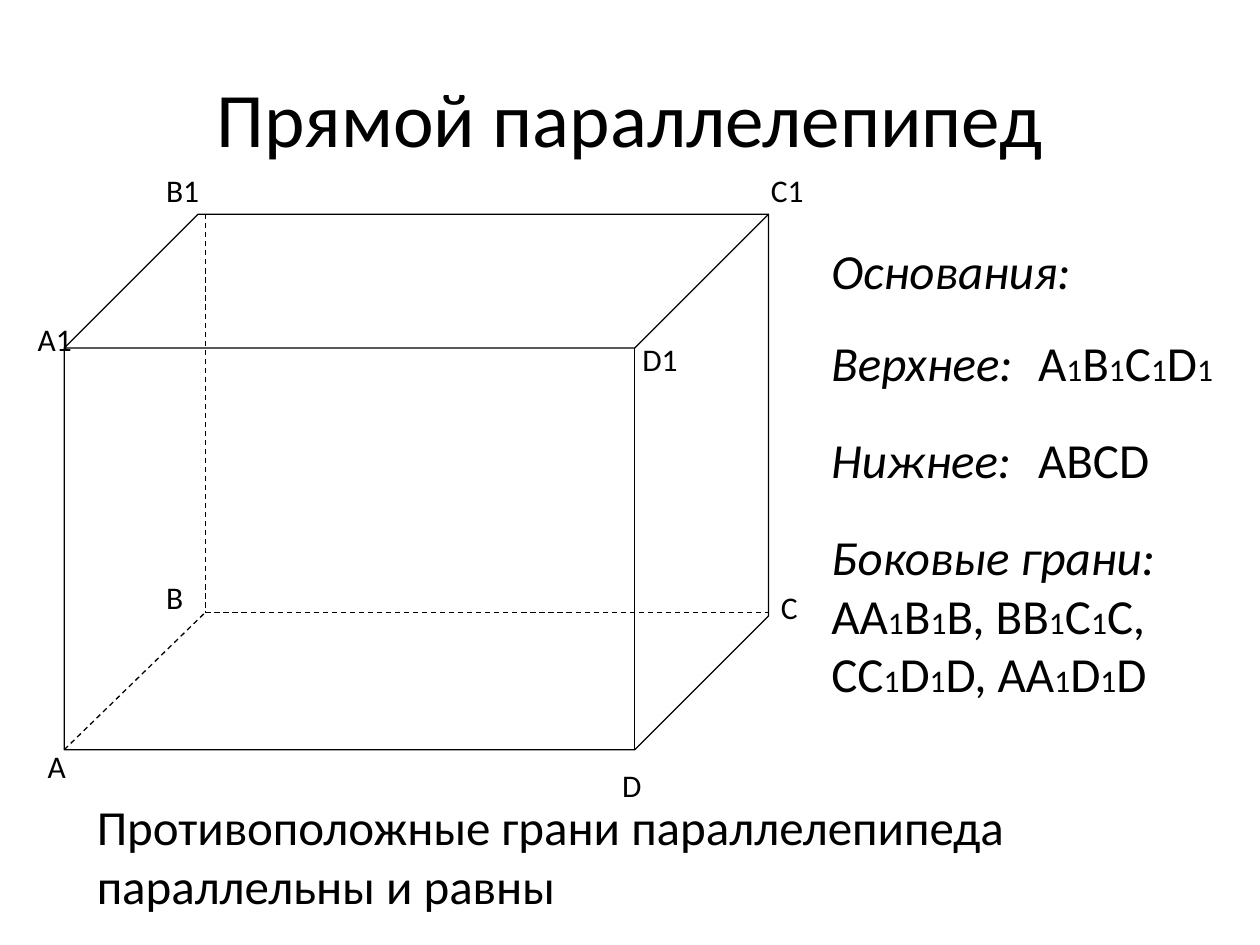
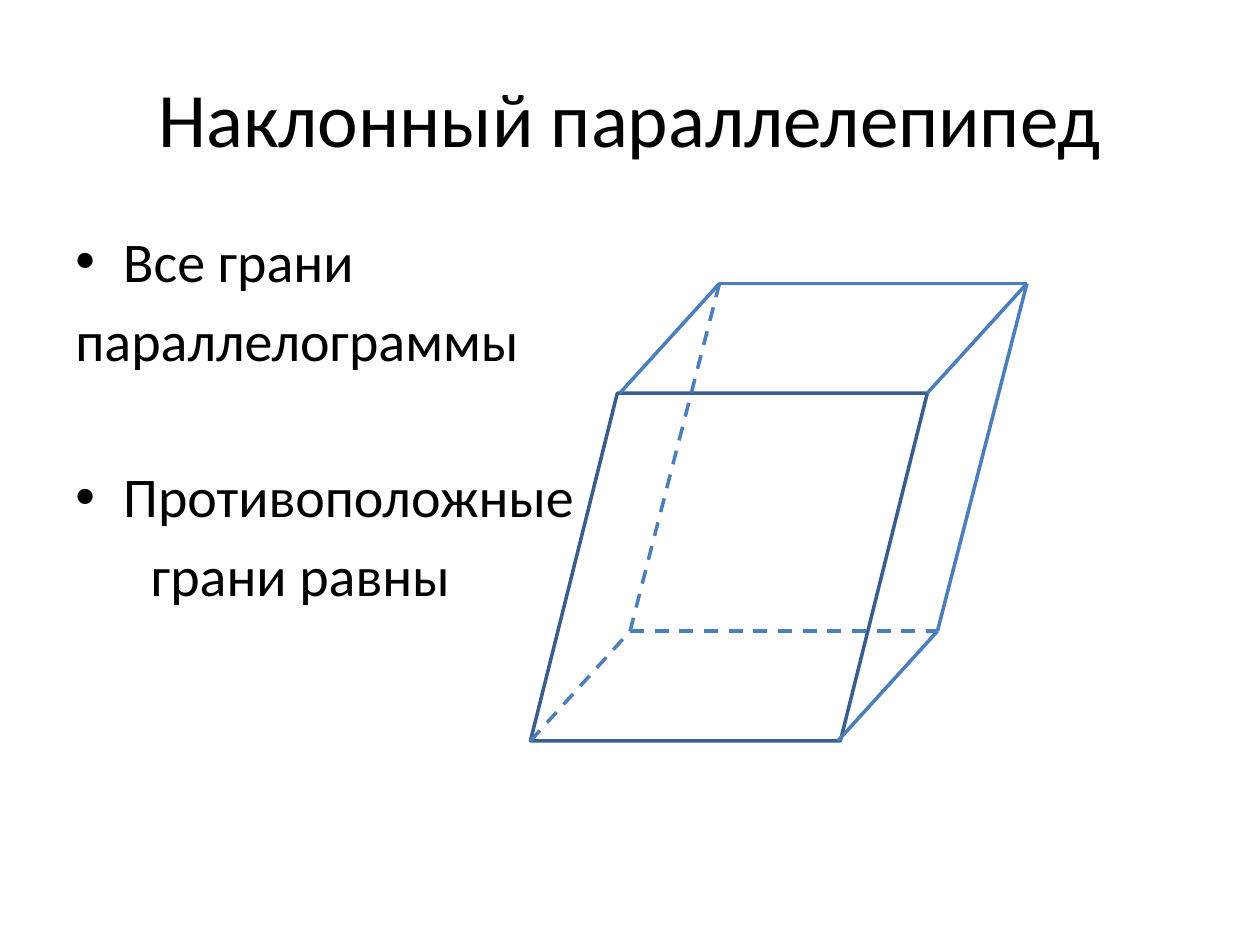
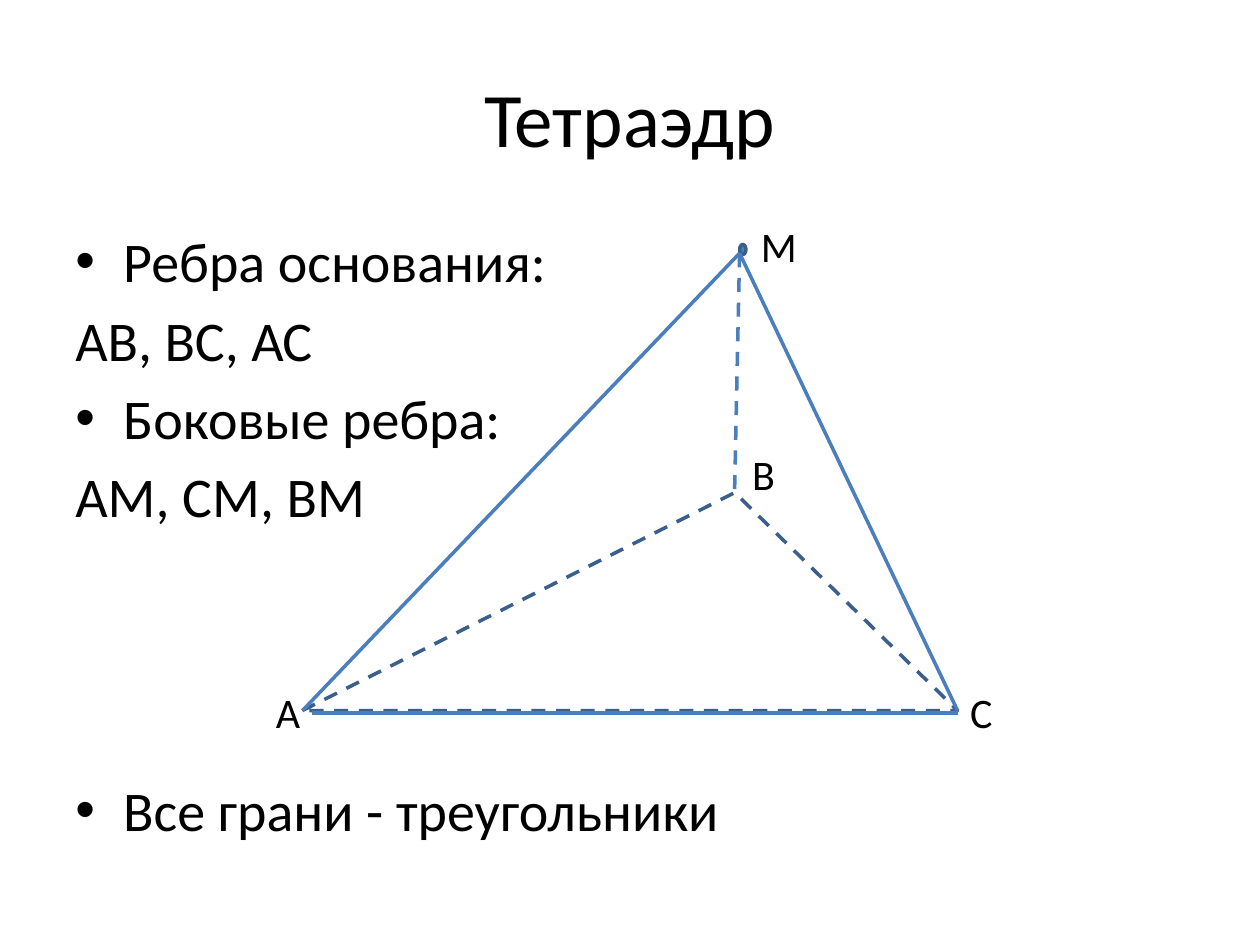
"""Build three slides on the parallelepiped and the tetrahedron."""
from dataclasses import dataclass
from itertools import groupby

from lxml import etree
from pptx import Presentation
from pptx import util as u
from pptx.dml.color import RGBColor
from pptx.enum import dml, shapes, text
from pptx.oxml import ns


@dataclass(frozen=True)
class Theme:
    font: str = "Calibri"
    ink: str = "000000"
    paper: str = "FFFFFF"
    dot: str = "4F81BD"
    edge: str = "4B7EBC"
    rim: str = "3A5F8C"
    title: int = 44
    body: int = 32
    note: int = 28
    mark: int = 24
    small: int = 18
    step: float = 44.8
    row: float = 38.4
    thin: float = 0.75
    bold: float = 2
    base: float = 2.5


T = Theme()
HEADS = ["Прямой параллелепипед", "Наклонный параллелепипед", "Тетраэдр"]

BOX = {"A": (0.51, 5.95), "B": (1.63, 4.86), "C": (6.1, 4.86), "B1": (1.63, 1.7)}
HIDDEN = [("B1", "B"), ("A", "B"), ("B", "C")]
BOX_TAGS = [
    ("А", 0.28, 5.88), ("D", 4.84, 6.03), ("C", 6.1, 4.62), ("B", 1.22, 4.54),
    ("А1", 0.2, 2.49), ("D1", 5, 2.65), ("B1", 1.22, 1.31), ("C1", 6.02, 1.31),
]
NOTES = [
    (0, "Основания:", ""),
    (19.2, "Верхнее:\t", "A1B1C1D1"),
    (21.6, "Нижнее:\t", "ABCD"),
    (21.6, "Боковые грани: ", "AA1B1B, BB1C1C, CC1D1D, AA1D1D"),
]
CLAIM = "Противоположные грани параллелепипеда параллельны и равны"

SLANT = {
    "A": (4.21, 5.88), "B": (5, 5.01), "C": (7.44, 5.01), "D": (6.65, 5.88),
    "A1": (4.92, 3.12), "B1": (5.71, 2.25), "C1": (8.15, 2.25), "D1": (7.36, 3.12),
}
SLANT_EDGES = [
    ("D1", "C1", False), ("D", "C", False), ("A", "B", True), ("B1", "C1", False),
    ("A1", "B1", False), ("B", "C", True), ("C1", "C", False), ("B1", "B", True),
]
SLANT_TEXT = [
    (1, True, 0, "Все грани"), (1, False, 0, "параллелограммы"),
    (2, True, 0, "Противоположные"), (1, False, 0.6, "грани равны"),
]

TETRA = {"A": (2.4, 5.64), "B": (5.83, 3.91), "C": (7.6, 5.64), "M": (5.87, 2.01)}
TETRA_EDGES = [("M", "A", False), ("M", "B", True), ("M", "C", False)]
TETRA_TAGS = [("В", 5.87, 3.51), ("А", 2.09, 5.4), ("С", 7.6, 5.4), ("М", 5.94, 1.7)]
TETRA_TEXT = [
    (1, True, 0, "Ребра основания:"), (1, False, 0, "АВ, ВС, АС"),
    (1, True, 0, "Боковые ребра:"), (1, False, 0, "АМ, СМ, ВМ"),
    (4, True, 0, "Все грани - треугольники"),
]


def style(font, size, slant=False):
    font.name, font.size, font.italic = T.font, u.Pt(size), slant
    font.color.rgb = RGBColor.from_string(T.ink)


def frame(slide, x, y, w, h):
    tf = slide.shapes.add_textbox(*map(u.Inches, (x, y, w, h))).text_frame
    tf.word_wrap = True
    return tf


def write(slide, words, size, *place):
    tf = frame(slide, *place)
    tf.text = words
    style(tf.paragraphs[0].runs[0].font, size)
    return tf


def lines(tf, count):
    return [tf.paragraphs[0]] + [tf.add_paragraph() for _ in range(count - 1)]


def tags(slide, items, size, wide, high):
    for name, x, y in items:
        write(slide, name, size, x, y, wide, high).margin_right = 0


def body(slide, items):
    tf = frame(slide, 0.5, 1.75, 9, 4.95)
    for i, (p, (steps, dot, left, words)) in enumerate(zip(lines(tf, len(items)), items)):
        p.text = words
        prop = p._p.get_or_add_pPr()
        if dot:
            prop.set("marL", str(u.Inches(0.38)))
            prop.set("indent", str(-u.Inches(0.38)))
            etree.SubElement(prop, ns.qn("a:buFont"), typeface="Arial")
            etree.SubElement(prop, ns.qn("a:buChar"), char="•")
        else:
            prop.set("marL", str(u.Inches(left)))
        if i:
            p.space_before = u.Pt(round(steps * T.step - T.row, 2))
        style(p.runs[0].font, T.body)


def stroke(line, color, width, dash=False):
    line.color.rgb = RGBColor.from_string(color)
    line.width = u.Pt(width)
    if dash:
        line.dash_style = dml.MSO_LINE.DASH


def join(slide, start, end, color, width, dash=False):
    link = slide.shapes.add_connector(
        shapes.MSO_CONNECTOR.STRAIGHT, *map(u.Inches, start + end))
    stroke(link.line, color, width, dash)
    etree.SubElement(link._element.spPr, ns.qn("a:effectLst"))


def solid(slide, kind, place, color, width, fill=None, dash=False):
    form = slide.shapes.add_shape(kind, *map(u.Inches, place))
    form.shadow.inherit = False
    if fill:
        form.fill.solid()
        form.fill.fore_color.rgb = RGBColor.from_string(fill)
    else:
        form.fill.background()
    stroke(form.line, color, width, dash)
    return form


def notes(slide):
    tf = frame(slide, 6.5, 1.86, 3.5, 3.8)
    for p, (gap, label, faces) in zip(lines(tf, len(NOTES)), NOTES):
        stops = etree.SubElement(p._p.get_or_add_pPr(), ns.qn("a:tabLst"))
        etree.SubElement(stops, ns.qn("a:tab"), pos=str(u.Inches(1.64)), algn="l")
        if gap:
            p.space_before = u.Pt(gap)
        p.text = label
        style(p.runs[0].font, T.note, True)
        for index, chars in groupby(faces, str.isdigit):
            run = p.add_run()
            run.text = "".join(chars)
            style(run.font, T.small if index else T.note)


def right(slide):
    solid(slide, shapes.MSO_SHAPE.CUBE, (0.51, 1.7, 5.59, 4.25), T.ink, T.thin)
    for a, b in HIDDEN:
        join(slide, BOX[a], BOX[b], T.ink, T.thin, True)
    tags(slide, BOX_TAGS, T.small, 0.5, 0.4)
    notes(slide)
    write(slide, CLAIM, T.note, 0.67, 6.27, 8.27, 1.04)


def slant(slide):
    body(slide, SLANT_TEXT)
    solid(slide, shapes.MSO_SHAPE.PARALLELOGRAM, (4.21, 3.12, 3.15, 2.76),
          T.rim, T.bold, T.paper)
    for a, b, dash in SLANT_EDGES:
        join(slide, SLANT[a], SLANT[b], T.edge, T.bold, dash)


def tetra(slide):
    body(slide, TETRA_TEXT)
    floor = solid(slide, shapes.MSO_SHAPE.ISOSCELES_TRIANGLE, (2.4, 3.91, 5.2, 1.73),
                  T.rim, T.bold, T.paper, True)
    floor.adjustments[0] = 0.66
    solid(slide, shapes.MSO_SHAPE.OVAL, (5.87, 1.94, 0.05, 0.08), T.rim, T.bold, T.dot)
    for a, b, dash in TETRA_EDGES:
        join(slide, TETRA[a], TETRA[b], T.edge, T.bold, dash)
    tags(slide, TETRA_TAGS, T.mark, 0.45, 0.5)
    join(slide, (2.48, 5.66), (7.6, 5.66), T.edge, T.base)


def main():
    deck = Presentation()
    deck.slide_width, deck.slide_height = u.Inches(10), u.Inches(7.5)
    for head, draw in zip(HEADS, (right, slant, tetra)):
        slide = deck.slides.add_slide(deck.slide_layouts[6])
        tf = write(slide, head, T.title, 0.5, 0.3, 9, 1.25)
        tf.vertical_anchor = text.MSO_ANCHOR.MIDDLE
        tf.paragraphs[0].alignment = text.PP_ALIGN.CENTER
        draw(slide)
    deck.save("out.pptx")


if __name__ == "__main__":
    main()
